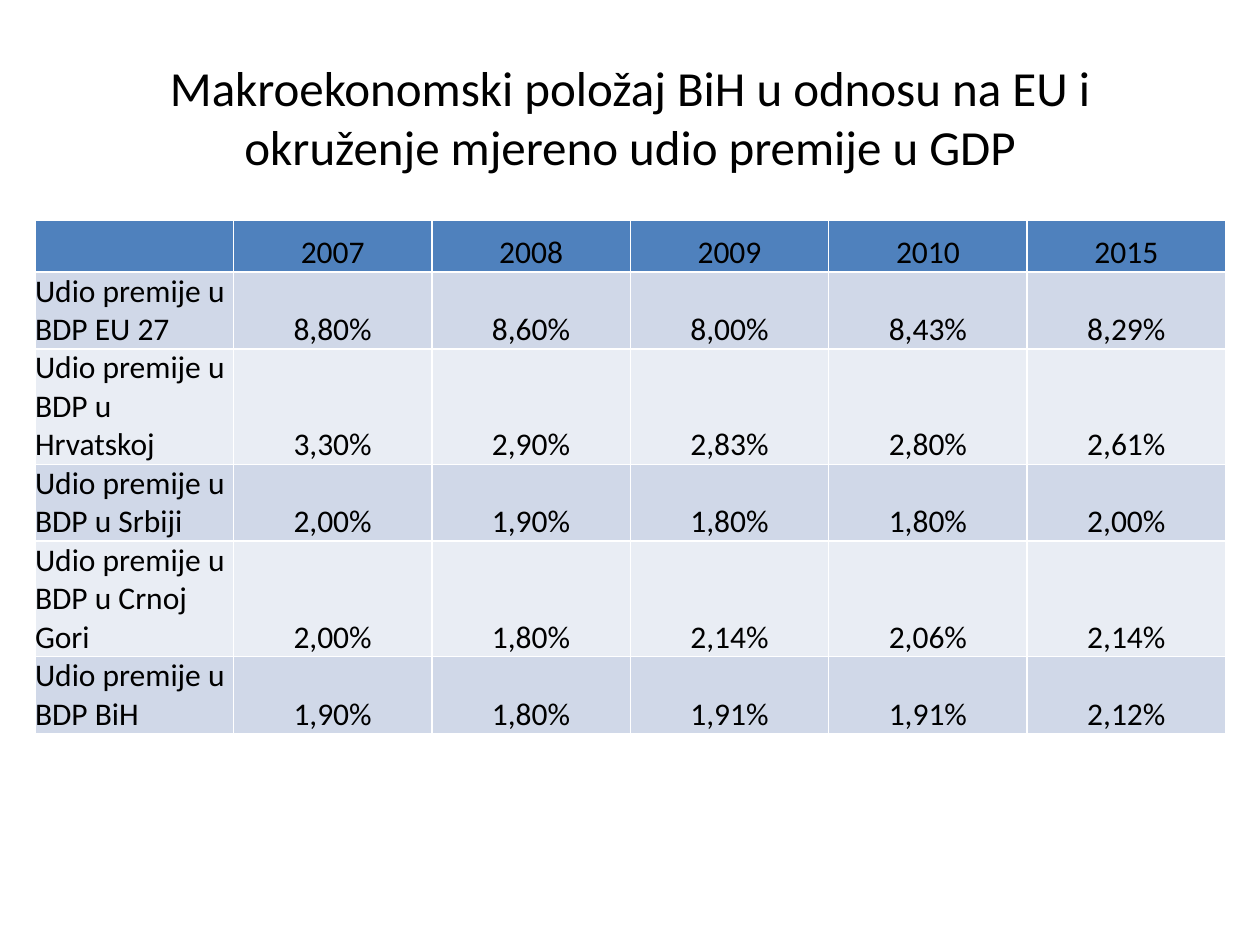
from dataclasses import dataclass
from pptx import Presentation
from pptx.dml.color import RGBColor as RGB
from pptx.enum.text import MSO_ANCHOR as Anchor, PP_ALIGN as Align
from pptx.util import Pt


@dataclass(frozen=True)
class Theme:
    font: str = "Calibri"
    ink: RGB = RGB(0, 0, 0)
    head: RGB = RGB(0x4F, 0x81, 0xBD)
    bands: tuple[RGB, ...] = (RGB(0xD0, 0xD8, 0xE8), RGB(0xE9, 0xED, 0xF4))
    big: float = 28
    body: float = 18


@dataclass(frozen=True)
class Row:
    label: str
    values: str
    height: float


THEME = Theme()
TITLE = "Makroekonomski položaj BiH u odnosu na EU i okruženje mjereno udio premije u GDP"
TWO, THREE = 43.9, 65.8  # heights of rows with two and three lines
ROWS = [
    Row("", "2007 2008 2009 2010 2015", 29.4),
    Row("Udio premije u BDP EU 27", "8,80% 8,60% 8,00% 8,43% 8,29%", TWO),
    Row("Udio premije u BDP u Hrvatskoj", "3,30% 2,90% 2,83% 2,80% 2,61%", THREE),
    Row("Udio premije u BDP u Srbiji", "2,00% 1,90% 1,80% 1,80% 2,00%", TWO),
    Row("Udio premije u BDP u Crnoj Gori", "2,00% 1,80% 2,14% 2,06% 2,14%", THREE),
    Row("Udio premije u BDP BiH", "1,90% 1,80% 1,91% 1,91% 2,12%", TWO),
]
COLS = 6
LEFT, TOP, COL = 20, 126, 113.4


def style(par, size: float, align: Align) -> None:
    par.alignment = align
    font = par.font
    font.name, font.size, font.bold = THEME.font, Pt(size), False
    font.color.rgb = THEME.ink


def add_title(slide) -> None:
    title = slide.shapes.title
    title.left, title.top = Pt(36), Pt(21.6)
    title.width, title.height = Pt(648), Pt(90)
    frame = title.text_frame
    frame.text = TITLE
    frame.vertical_anchor = Anchor.MIDDLE
    style(frame.paragraphs[0], THEME.big, Align.CENTER)


def fill_cell(cell, text: str, color: RGB, align: Align) -> None:
    cell.fill.solid()
    cell.fill.fore_color.rgb = color
    cell.vertical_anchor = Anchor.BOTTOM
    cell.margin_left = cell.margin_right = cell.margin_top = cell.margin_bottom = 0
    cell.text = text
    style(cell.text_frame.paragraphs[0], THEME.body, align)


def add_grid(slide) -> None:
    """Draw the table; its default style gives the white borders."""
    height = sum(row.height for row in ROWS)
    table = slide.shapes.add_table(
        len(ROWS), COLS, Pt(LEFT), Pt(TOP), Pt(COL * COLS), Pt(height)).table
    for col in table.columns:
        col.width = Pt(COL)
    for r, row in enumerate(ROWS):
        table.rows[r].height = Pt(row.height)
        color = THEME.bands[(r - 1) % 2] if r else THEME.head
        for c, text in enumerate([row.label, *row.values.split()]):
            fill_cell(table.cell(r, c), text, color, Align.CENTER if c else Align.LEFT)


def main() -> None:
    deck = Presentation()
    deck.slide_width, deck.slide_height = Pt(720), Pt(540)
    slide = deck.slides.add_slide(deck.slide_layouts[5])
    add_title(slide)
    add_grid(slide)
    deck.save("out.pptx")


if __name__ == "__main__":
    main()
